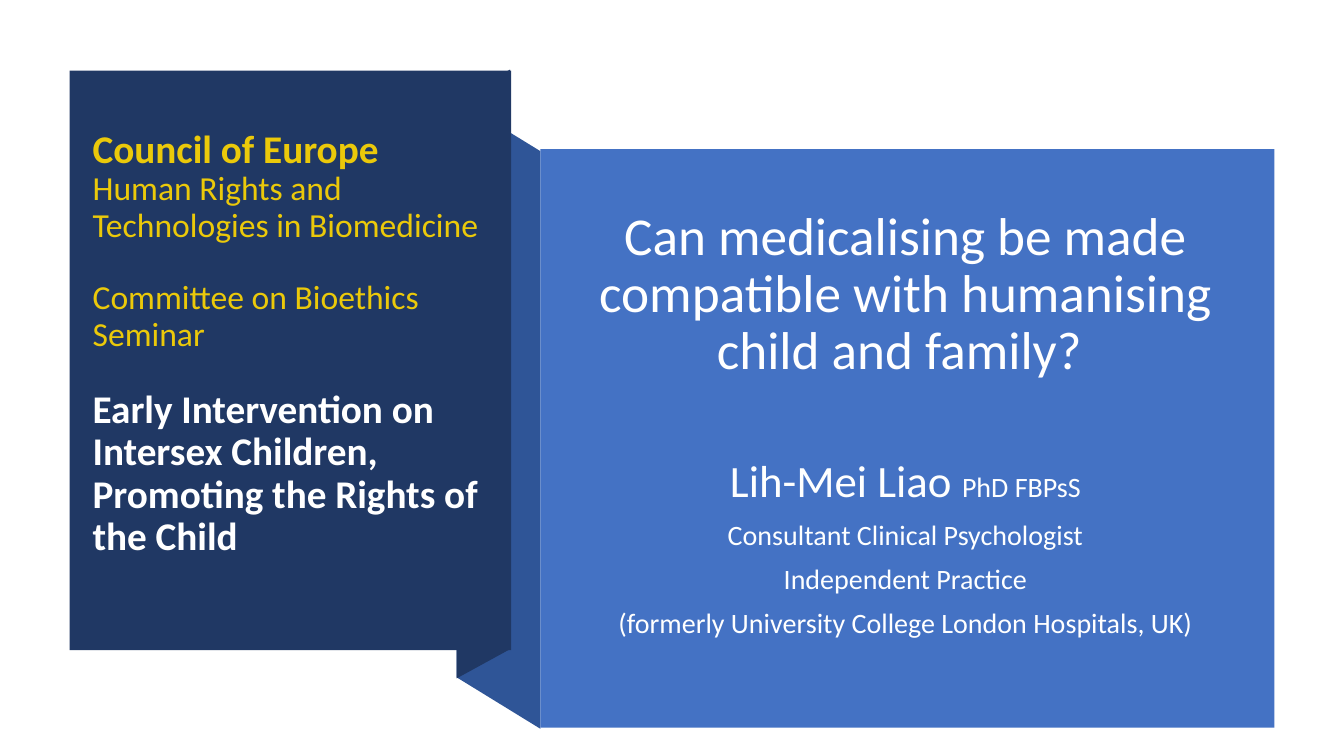
from dataclasses import dataclass

from pptx import Presentation
from pptx.dml.color import RGBColor
from pptx.enum.shapes import MSO_SHAPE
from pptx.enum.text import MSO_ANCHOR, PP_ALIGN
from pptx.util import Inches, Pt

RECTANGLE = MSO_SHAPE.RECTANGLE
MIDDLE = MSO_ANCHOR.MIDDLE
LEFT, CENTER = PP_ALIGN.LEFT, PP_ALIGN.CENTER


@dataclass(frozen=True)
class Theme:
    font: str = "Calibri"
    navy: str = "203864"
    fold: str = "2F5597"
    blue: str = "4472C4"
    gold: str = "EBC90A"
    white: str = "FFFFFF"
    soft_white: str = "FEFFFF"
    question: int = 38
    speaker: int = 32
    heading: int = 28
    body: int = 24
    detail: int = 20


theme = Theme()

presentation = Presentation()
presentation.slide_width = Inches(13.33)
presentation.slide_height = Inches(7.5)
slide = presentation.slides.add_slide(presentation.slide_layouts[6])


def paint(shape, color):
    shape.shadow.inherit = False
    shape.fill.solid()
    shape.fill.fore_color.rgb = RGBColor.from_string(color)
    shape.line.fill.background()


def add_text(box, alignment, lines):
    """Fill a new text box; each line is (text, size, color, bold, space before)."""
    frame = slide.shapes.add_textbox(*map(Inches, box)).text_frame
    frame.word_wrap = True
    frame.vertical_anchor = MIDDLE
    for index, (text, size, color, bold, space_before) in enumerate(lines):
        paragraph = frame.paragraphs[0] if index == 0 else frame.add_paragraph()
        paragraph.alignment = alignment
        paragraph.line_spacing = 0.9
        paragraph.space_before = Pt(space_before)
        paragraph.font.name = theme.font
        paragraph.font.size = Pt(size)
        paragraph.font.bold = bold
        paragraph.font.color.rgb = RGBColor.from_string(color)
        paragraph.add_run().text = text
    return frame


# Folded ribbon joining the two panels
ribbon_parts = [
    (theme.fold, [(5.36, 7.23), (4.53, 6.72), (4.53, 0.99), (5.36, 1.5)]),
    (theme.navy, [(5.06, 6.44), (4.53, 6.73), (4.53, 0.98), (5.06, 0.69)]),
]
for color, points in ribbon_parts:
    corners = [(Inches(x), Inches(y)) for x, y in points]
    builder = slide.shapes.build_freeform(*corners[0])
    builder.add_line_segments(corners[1:], close=True)
    paint(builder.convert_to_shape(), color)

# Panels
panels = [
    (theme.navy, (0.69, 0.7, 4.38, 5.75)),
    (theme.blue, (5.36, 1.48, 7.28, 5.74)),
]
for color, box in panels:
    paint(slide.shapes.add_shape(RECTANGLE, *map(Inches, box)), color)

# Event
section_gap = 26
add_text((0.82, 0.76, 4.22, 5.31), LEFT, [
    ("Council of Europe", theme.heading, theme.gold, True, 0),
    ("Human Rights and Technologies in Biomedicine", theme.body, theme.gold, False, 0),
    ("Committee on Bioethics Seminar", theme.body, theme.gold, False, section_gap),
    ("Early Intervention on Intersex Children,", theme.heading, theme.white, True, section_gap),
    ("Promoting the Rights of the Child", theme.heading, theme.white, True, 0),
])

# Talk and speaker
talk = add_text((5.59, 1.5, 6.78, 5.42), CENTER, [
    ("Can medicalising be made compatible with humanising child and family? ",
     theme.question, theme.white, False, 10),
    ("Lih-Mei Liao ", theme.speaker, theme.soft_white, False, 55),
    ("Consultant Clinical Psychologist", theme.detail, theme.soft_white, False, 10),
    ("Independent Practice", theme.detail, theme.soft_white, False, 10),
    ("(formerly University College London Hospitals, UK)",
     theme.detail, theme.white, False, 10),
])
degrees = talk.paragraphs[1].add_run()
degrees.text = "PhD FBPsS"
degrees.font.size = Pt(theme.detail)

presentation.save("out.pptx")
